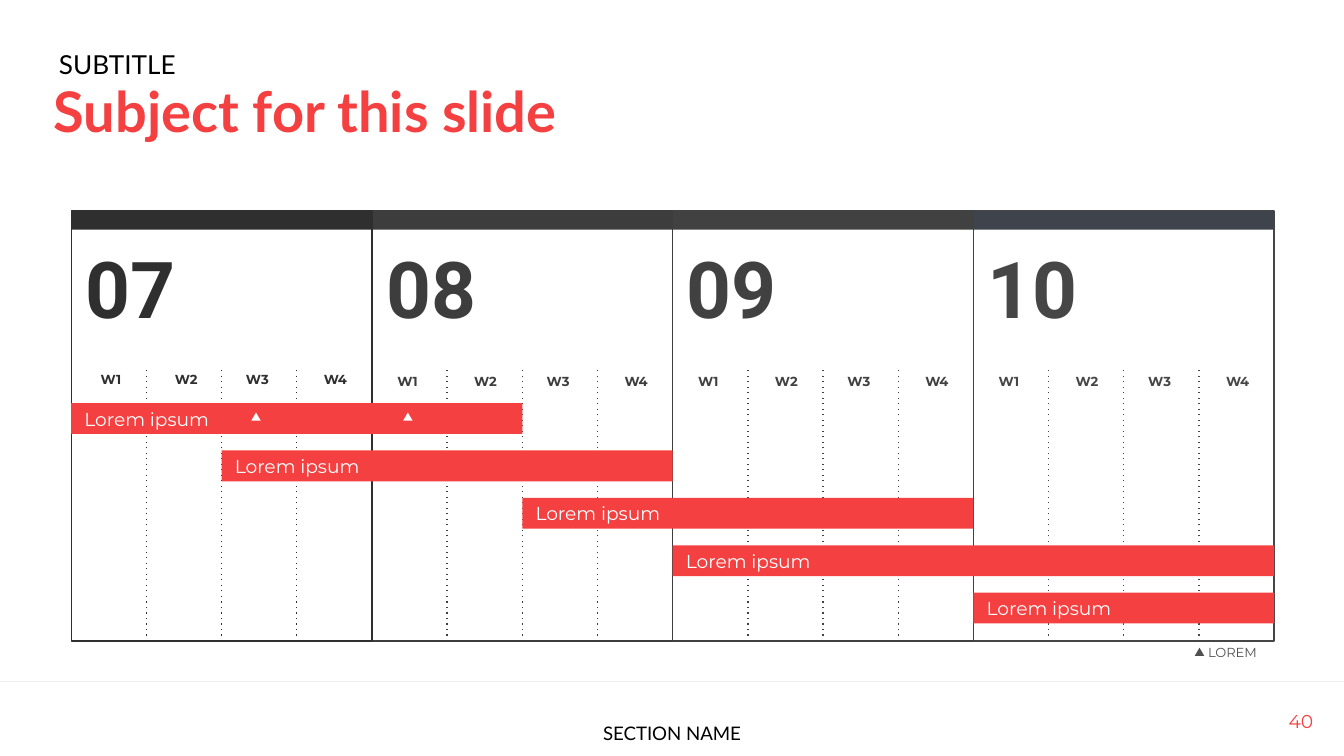
"""Build a four-month project schedule slide with weekly task bars."""
from lxml import etree
from pptx import Presentation
from pptx.dml.color import RGBColor
from pptx.enum.shapes import MSO_CONNECTOR, MSO_SHAPE
from pptx.enum.text import MSO_ANCHOR, PP_ALIGN
from pptx.oxml.ns import qn
from pptx.util import Inches, Pt

RECTANGLE, TRIANGLE = MSO_SHAPE.RECTANGLE, MSO_SHAPE.ISOSCELES_TRIANGLE
STRAIGHT = MSO_CONNECTOR.STRAIGHT
TOP, MIDDLE = MSO_ANCHOR.TOP, MSO_ANCHOR.MIDDLE
LEFT, CENTER, RIGHT = PP_ALIGN.LEFT, PP_ALIGN.CENTER, PP_ALIGN.RIGHT

RED = RGBColor(0xF4, 0x40, 0x40)
WHITE = RGBColor(0xFF, 0xFF, 0xFF)
BLACK = RGBColor(0x00, 0x00, 0x00)
RULE_GRAY = RGBColor(0xEF, 0xEF, 0xEF)
LEGEND_GRAY = RGBColor(0x50, 0x50, 0x50)
JULY = RGBColor(0x2F, 0x2F, 0x2F)
AUGUST = RGBColor(0x3D, 0x3D, 0x3D)
SEPTEMBER = RGBColor(0x41, 0x41, 0x41)
OCTOBER = RGBColor(0x46, 0x46, 0x46)
OCTOBER_BAND = RGBColor(0x3E, 0x43, 0x4C)

GRID_LEFT, GRID_RIGHT = 0.53, 9.48
GRID_TOP, GRID_BOTTOM = 1.57, 4.77
MONTH = (GRID_RIGHT - GRID_LEFT) / 4
WEEK = MONTH / 4
WEEKS_TOP = 2.74
BAR_TOP, BAR_STEP = 3, 1.41 / 4

prs = Presentation()
prs.slide_width = Inches(10)
prs.slide_height = Inches(10 * 9 / 16)
slide = prs.slides.add_slide(prs.slide_layouts[5])


def add_block(kind, box, fill=None, line=None):
    block = slide.shapes.add_shape(kind, *map(Inches, box))
    block.shadow.inherit = False
    if fill is None:
        block.fill.background()
    else:
        block.fill.solid()
        block.fill.fore_color.rgb = fill
    if line is None:
        block.line.fill.background()
    else:
        block.line.color.rgb = line
        block.line.width = Pt(0.75)
    return block


def write(text, size, font, color, box=None, holder=None,
          align=LEFT, anchor=MIDDLE, bold=False):
    holder = holder or slide.shapes.add_textbox(*map(Inches, box))
    frame = holder.text_frame
    frame.word_wrap = True
    frame.vertical_anchor = anchor
    frame.margin_left = frame.margin_right = Inches(0.1)
    frame.margin_top = frame.margin_bottom = Inches(0.1)
    paragraph = frame.paragraphs[0]
    paragraph.alignment = align
    run = paragraph.add_run()
    run.text = text
    run.font.size = Pt(size)
    run.font.name = font
    run.font.bold = bold
    run.font.color.rgb = color
    return paragraph


add_block(RECTANGLE, (-0.04, 5.07, 10.09, 0.66), WHITE, RULE_GRAY)
write("40", 10, "Montserrat", RED, (9.27, 5.18, 0.6, 0.37), align=RIGHT)
section = write("SECTION NAME", 10, "Lato", BLACK, (3.68, 5.19, 2.64, 0.25),
                align=CENTER, anchor=TOP)
section.line_spacing = 1.5
section.space_after = Pt(12)

write("SUBTITLE", 14, "Lato", BLACK, (0.34, 0.26, 3.88, 0.43), anchor=TOP)
title = slide.shapes.title
title.left, title.top = Inches(0.3), Inches(0.47)
title.width, title.height = Inches(7.26), Inches(0.43)
write("Subject for this slide", 30, "Lato", RED, holder=title, anchor=TOP, bold=True)

label_offsets = (0.07, 0.65, 1.19, 1.77)
months = [
    ("07", JULY, JULY, 2.72, (0.1, 0.66, 1.19, 1.77)),
    ("08", AUGUST, AUGUST, WEEKS_TOP, label_offsets),
    ("09", SEPTEMBER, SEPTEMBER, WEEKS_TOP, label_offsets),
    ("10", OCTOBER, OCTOBER_BAND, WEEKS_TOP, label_offsets),
]
for index, (number, color, band_color, label_top, offsets) in reversed(list(enumerate(months))):
    left = GRID_LEFT + index * MONTH
    month_frame = add_block(RECTANGLE, (left, GRID_TOP, MONTH, GRID_BOTTOM - GRID_TOP), line=color)
    add_block(RECTANGLE, (left, GRID_TOP, MONTH, 0.14), band_color)
    write(number, 42, "Roboto", color, (left, 1.7, 0.88, 0.87), align=CENTER, bold=True)
    for week, offset in enumerate(offsets, 1):
        write(f"W{week}", 7, "Montserrat", color, (left + offset, label_top, 0.39, 0.2),
              align=CENTER, bold=True)
    for week in range(1, 4):
        x = Inches(left + week * WEEK)
        divider = slide.shapes.add_connector(STRAIGHT, x, Inches(GRID_BOTTOM), x, Inches(WEEKS_TOP))
        if week == 2:
            divider.begin_connect(month_frame, 2)
            divider.end_x = divider.begin_x
        divider.line.color.rgb = color
        divider.line.width = Pt(0.75)
        properties = divider.element.spPr
        etree.SubElement(properties.find(qn("a:ln")), qn("a:prstDash"), val="dot")
        etree.SubElement(properties, qn("a:effectLst"))

tasks = [(0, 6), (2, 6), (6, 6), (8, 8), (12, 4)]
for row, (start, weeks) in enumerate(tasks):
    task_bar = add_block(RECTANGLE, (GRID_LEFT + start * WEEK, BAR_TOP + row * BAR_STEP,
                                     weeks * WEEK, 0.23), RED)
    write("Lorem ipsum", 10, "Montserrat", WHITE, holder=task_bar)

write("LOREM", 7, "Montserrat", LEGEND_GRAY, (8.89, 4.8, 0.7, 0.11))
for x, y, color in [(8.89, 4.82, LEGEND_GRAY), (1.87, 3.07, WHITE), (3, 3.07, WHITE)]:
    add_block(TRIANGLE, (x, y, 0.07, 0.06), color)

prs.save("out.pptx")
